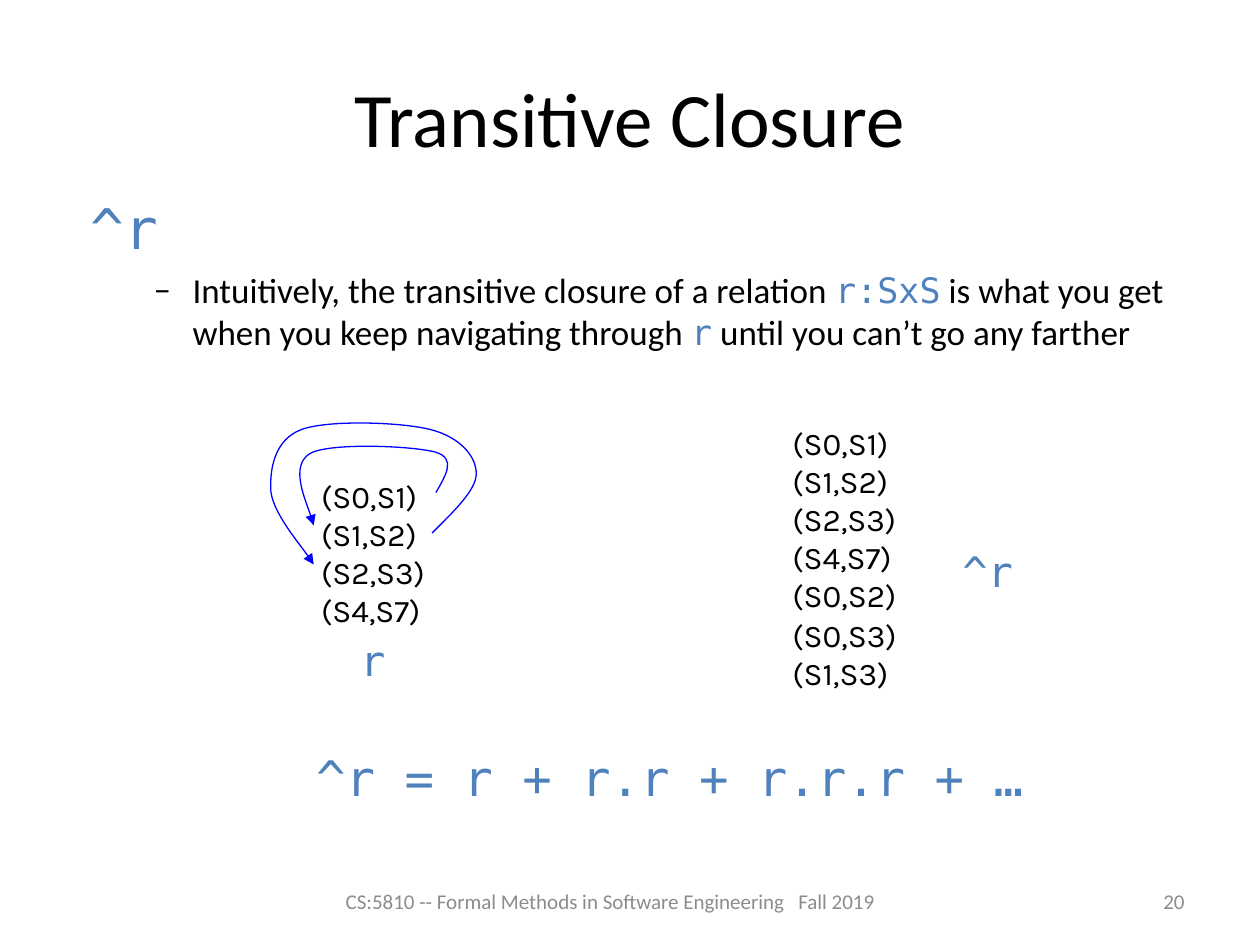
import dataclasses

import lxml.etree
import pptx
import pptx.dml.color
import pptx.enum.text
import pptx.oxml.ns
import pptx.util

ALIGN = pptx.enum.text.PP_ALIGN
ANCHOR = pptx.enum.text.MSO_ANCHOR
CELLS_PER_INCH = 10


@dataclasses.dataclass(frozen=True)
class Theme:
    prose: str = "Calibri"
    code: str = "DejaVu Sans Mono"
    pairs: str = "Karla"
    ink: str = "000000"
    accent: str = "4F81BD"
    muted: str = "8C8C8C"
    arrow: str = "0000FF"
    title_size: int = 44
    term_size: int = 32
    formula_size: int = 28
    label_size: int = 24
    prose_size: int = 20
    pair_size: int = 18
    footer_size: int = 12
    arrow_width: float = 0.75


@dataclasses.dataclass(frozen=True)
class Box:
    column: float
    row: float
    columns: float
    rows: float

    def inner(self, column, row, columns, rows):
        return Box(self.column + column, self.row + row, columns, rows)

    def emu(self):
        return [cells(n) for n in (self.column, self.row, self.columns, self.rows)]


THEME = Theme()


def cells(count):
    return pptx.util.Inches(count / CELLS_PER_INCH)


def rgb(value):
    return pptx.dml.color.RGBColor.from_string(value)


def style(run, font, size, color):
    run.font.name = font
    run.font.size = pptx.util.Pt(size)
    run.font.color.rgb = rgb(color)


def add_text(slide, box, lines, font, size, color,
             align=ALIGN.LEFT, anchor=ANCHOR.TOP, wrap=True):
    frame = slide.shapes.add_textbox(*box.emu()).text_frame
    frame.word_wrap = wrap
    frame.vertical_anchor = anchor
    frame.text = "\n".join(lines)
    for paragraph in frame.paragraphs:
        paragraph.alignment = align
        for run in paragraph.runs:
            style(run, font, size, color)
    return frame


def add_label(slide, box, text):
    add_text(slide, box, [text], THEME.code, THEME.label_size, THEME.accent, wrap=False)


def add_pairs(slide, box, pairs):
    add_text(slide, box, pairs, THEME.pairs, THEME.pair_size, THEME.ink, wrap=False)


def add_curved_arrow(slide, box, points):
    start, *rest = [(cells(box.column + x), cells(box.row + y)) for x, y in points]
    builder = slide.shapes.build_freeform(*start)
    builder.add_line_segments(rest, close=False)
    curve = builder.convert_to_shape()
    curve.shadow.inherit = False
    curve.fill.background()
    curve.line.color.rgb = rgb(THEME.arrow)
    curve.line.width = pptx.util.Pt(THEME.arrow_width)

    qn = pptx.oxml.ns.qn
    segments = list(curve.element.iter(qn("a:lnTo")))
    outline = segments[0].getparent()
    for first in range(0, len(segments), 3):
        bezier = lxml.etree.SubElement(outline, qn("a:cubicBezTo"))
        for segment in segments[first:first + 3]:
            bezier.append(segment[0])
            outline.remove(segment)
    line = curve.element.spPr.find(qn("a:ln"))
    lxml.etree.SubElement(line, qn("a:tailEnd"), type="triangle")


def place_title(slide, box):
    title = slide.shapes.title
    title.left, title.top, title.width, title.height = box.emu()
    frame = title.text_frame
    frame.text = "Transitive Closure"
    frame.vertical_anchor = ANCHOR.MIDDLE
    frame.paragraphs[0].alignment = ALIGN.CENTER
    style(frame.paragraphs[0].runs[0], THEME.prose, THEME.title_size, THEME.ink)


def place_explanation(slide, box):
    frame = add_text(slide, box, ["^r"], THEME.code, THEME.term_size, THEME.accent)
    frame.paragraphs[0].space_before = pptx.util.Pt(2)
    intuition = frame.add_paragraph()
    intuition.level = 1
    intuition.space_before = pptx.util.Pt(0.2 * THEME.prose_size)
    phrases = [
        ("Intuitively, the transitive closure of a relation ", False),
        ("r:SxS", True),
        (" is what you get when you keep navigating through ", False),
        ("r", True),
        (" until you can’t go any farther", False),
    ]
    for words, is_code in phrases:
        run = intuition.add_run()
        run.text = words
        style(run, THEME.code if is_code else THEME.prose, THEME.prose_size,
              THEME.accent if is_code else THEME.ink)

    qn = pptx.oxml.ns.qn
    properties = intuition._p.get_or_add_pPr()
    properties.set("marL", str(cells(8.1)))
    properties.set("indent", str(-cells(3.1)))
    lxml.etree.SubElement(properties, qn("a:buFont"), typeface=THEME.prose)
    lxml.etree.SubElement(properties, qn("a:buChar"), char="–")


def place_relation(slide, box):
    add_pairs(slide, box.inner(3.5, 4.4, 10.5, 13),
              ["(S0,S1)", "(S1,S2)", "(S2,S3)", "(S4,S7)"])
    add_label(slide, box.inner(6.6, 16.9, 4, 5), "r")
    add_curved_arrow(slide, box, [
        (13.6, 6.1), (14.4, 4.7), (15.2, 3.4), (13.6, 2.9), (11.9, 2.4),
        (5.2, 2.1), (3.6, 3), (2, 4), (3.7, 7.8), (3.9, 8.7)])
    add_curved_arrow(slide, box, [
        (13.3, 9.3), (15, 7.6), (16.8, 5.9), (16.8, 4.6), (16.8, 3.2),
        (15.5, 1.7), (13.2, 1.1), (10.9, 0.5), (5, 0.3), (2.9, 1.1),
        (0.8, 1.9), (0.4, 4.2), (0.5, 6), (0.7, 7.7), (3.3, 10.8), (3.9, 11.8)])


def place_closure(slide, box):
    add_pairs(slide, box.inner(0, 0, 10.5, 13),
              ["(S0,S1)", "(S1,S2)", "(S2,S3)", "(S4,S7)"])
    for row, derived in [(12, "(S0,S2)"), (15.2, "(S0,S3)"), (18.2, "(S1,S3)")]:
        add_pairs(slide, box.inner(0, row, 10.5, 4), [derived])
    add_label(slide, box.inner(13.5, 9.6, 6, 5), "^r")


def place_formula(slide, box):
    add_text(slide, box, ["^r = r + r.r + r.r.r + …"], THEME.code,
             THEME.formula_size, THEME.accent, ALIGN.CENTER)


def place_footer(slide, box):
    course = "CS:5810 -- Formal Methods in Software Engineering   Fall 2019"
    for column, columns, text, align in [(0, 52.9, course, ALIGN.CENTER),
                                         (57, 16, "20", ALIGN.RIGHT)]:
        add_text(slide, box.inner(column, 0, columns, box.rows), [text], THEME.prose,
                 THEME.footer_size, THEME.muted, align, ANCHOR.MIDDLE)


def main():
    presentation = pptx.Presentation()
    presentation.slide_width = cells(100)
    presentation.slide_height = cells(75)
    slide = presentation.slides.add_slide(presentation.slide_layouts[5])
    place_title(slide, Box(5, 3, 90, 12.5))
    place_explanation(slide, Box(6.2, 14.9, 88.9, 14))
    place_relation(slide, Box(21, 33, 17, 22))
    place_closure(slide, Box(61.9, 33.2, 20, 22.2))
    place_formula(slide, Box(11.2, 58.8, 83.9, 5.5))
    place_footer(slide, Box(22, 69.5, 73, 4))
    presentation.save("out.pptx")


if __name__ == "__main__":
    main()
